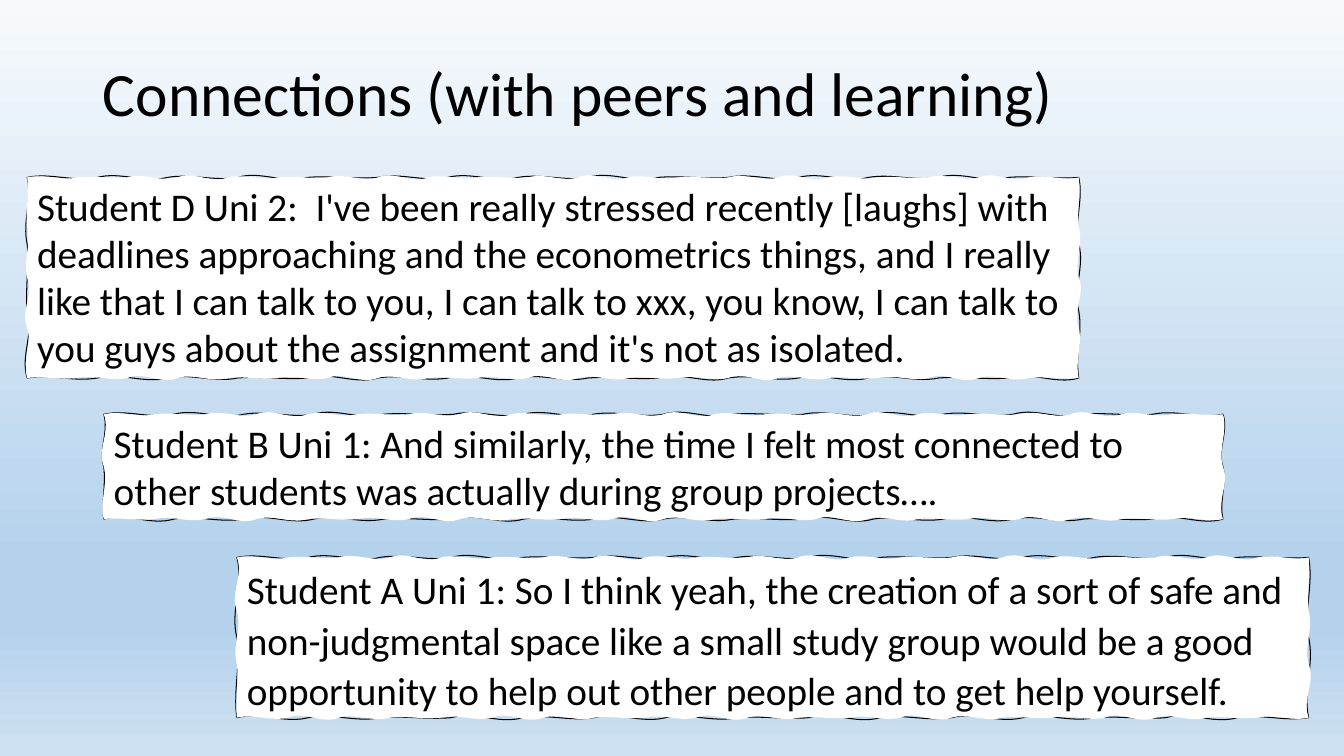
from copy import deepcopy
from itertools import cycle
from lxml import etree
from pptx import Presentation
from pptx import util as u
from pptx.dml.color import RGBColor
from pptx.enum import text
from pptx.oxml.ns import qn

HUES = {"ink": "000000", "card": "FFFFFF", "pale": "F7FAFD",
        "sky": "B5D2EC", "mist": "CEE1F2"}
FONT = "Calibri"


def style(para, size):
    for run in para.runs:
        run.font.name, run.font.size = FONT, u.Pt(size)
        run.font.color.rgb = RGBColor.from_string(HUES["ink"])


def wavy(paths, wide, high, step, waves, **flags):
    """Add a closed path whose four edges swing outward, then inward."""
    path = etree.SubElement(paths, qn("a:path"), w=str(wide), h=str(high), **flags)

    def put(name, *points):
        node = etree.SubElement(path, qn(name))
        for x, y in points:
            etree.SubElement(node, qn("a:pt"), x=str(round(x)), y=str(round(y)))

    put("a:moveTo", (0, 0))
    swing = cycle(waves)
    edges = [(0, 0, 1, 0, wide), (wide, 0, 0, 1, high),
             (wide, high, -1, 0, wide), (0, high, 0, -1, high)]
    for left, top, dx, dy, span in edges:
        count = max(2, round(span / u.Inches(step)))
        for i in range(count):
            depth = u.Inches(next(swing))
            points = []
            for part, side in ((1 / 3, 1), (2 / 3, -1), (1, 0)):
                along = (i + part) * span / count
                points.append((left + dx * along + dy * depth * side,
                               top + dy * along - dx * depth * side))
            put("a:cubicBezTo", *points)
    etree.SubElement(path, qn("a:close"))


deck = Presentation()
deck.slide_width, deck.slide_height = u.Inches(13.33), u.Inches(7.5)
slide = deck.slides.add_slide(deck.slide_layouts[5])

# Background gradient
fill = slide.background.fill
fill.gradient()
fill.gradient_angle = 270
stops = next(slide.element.iter(qn("a:gsLst")))
for i in range(2):
    stops.append(deepcopy(stops[-1]))
shades = [(0, "pale"), (0.74, "sky"), (0.83, "sky"), (1, "mist")]
for stop, (place, hue) in zip(fill.gradient_stops, shades):
    stop.position = place
    stop.color.rgb = RGBColor.from_string(HUES[hue])

# Title
title = slide.shapes.title
title.left, title.top = u.Inches(0.92), u.Inches(0.23)
title.width, title.height = u.Inches(11.5), u.Inches(1.45)
title.text_frame.text = "Connections (with peers and learning)"
title.text_frame.vertical_anchor = text.MSO_ANCHOR.MIDDLE
head = title.text_frame.paragraphs[0]
head.alignment = text.PP_ALIGN.LEFT
head.line_spacing = 0.9
style(head, 44)

# Quotes: box, hanging indent, line spacing, space after, paragraphs
quotes = [
    ((0.27, 1.76, 10.43, 1.99), 1.18, 1, 0, [
        "Student D Uni 2:  I've been really stressed recently [laughs] with",
        "deadlines approaching and the econometrics things, and I really",
        "like that I can talk to you, I can talk to xxx, you know, I can talk to",
        "you guys about the assignment and it's not as isolated."]),
    ((1.03, 4.11, 11.1, 1.04), 0, 1, 0, [
        "Student B Uni 1: And similarly, the time I felt most connected to "
        "other students was actually during group projects…."]),
    ((2.35, 5.53, 10.63, 1.59), 0, 1.07, 8, [
        "Student A Uni 1: So I think yeah, the creation of a sort of safe and "
        "non-judgmental space like a small study group would be a good "
        "opportunity to help out other people and to get help yourself."]),
]
for box, indent, pitch, after, lines in quotes:
    x, y, wide, high = [u.Inches(n) for n in box]
    form = slide.shapes.build_freeform(x, y)
    form.add_line_segments([(x + wide, y), (x + wide, y + high), (x, y + high)])
    card = form.convert_to_shape()
    card.shadow.inherit = False
    card.fill.solid()
    card.fill.fore_color.rgb = RGBColor.from_string(HUES["card"])
    card.line.color.rgb = RGBColor.from_string(HUES["ink"])
    card.line.width = u.Pt(0.75)

    # Rough edges: an outline behind a separate fill
    paths = next(card.element.iter(qn("a:pathLst")))
    paths.remove(paths[0])
    wavy(paths, wide, high, 0.7, [0.05, 0.06, 0.04, 0.07, 0.02], fill="none")
    wavy(paths, wide, high, 0.5, [0.04, 0.02, 0.05, 0.07], stroke="0")

    # Quote text
    frame = card.text_frame
    frame.word_wrap = True
    frame.auto_size = text.MSO_AUTO_SIZE.SHAPE_TO_FIT_TEXT
    frame.vertical_anchor = text.MSO_ANCHOR.TOP
    frame.text = "\n".join(lines)
    for para in frame.paragraphs:
        para.alignment = text.PP_ALIGN.LEFT
        para.line_spacing = pitch
        para.space_after = u.Pt(after)
        props = para._p.get_or_add_pPr()
        props.set("marL", str(u.Inches(indent)))
        props.set("indent", str(-u.Inches(indent)))
        style(para, 28)

deck.save("out.pptx")
